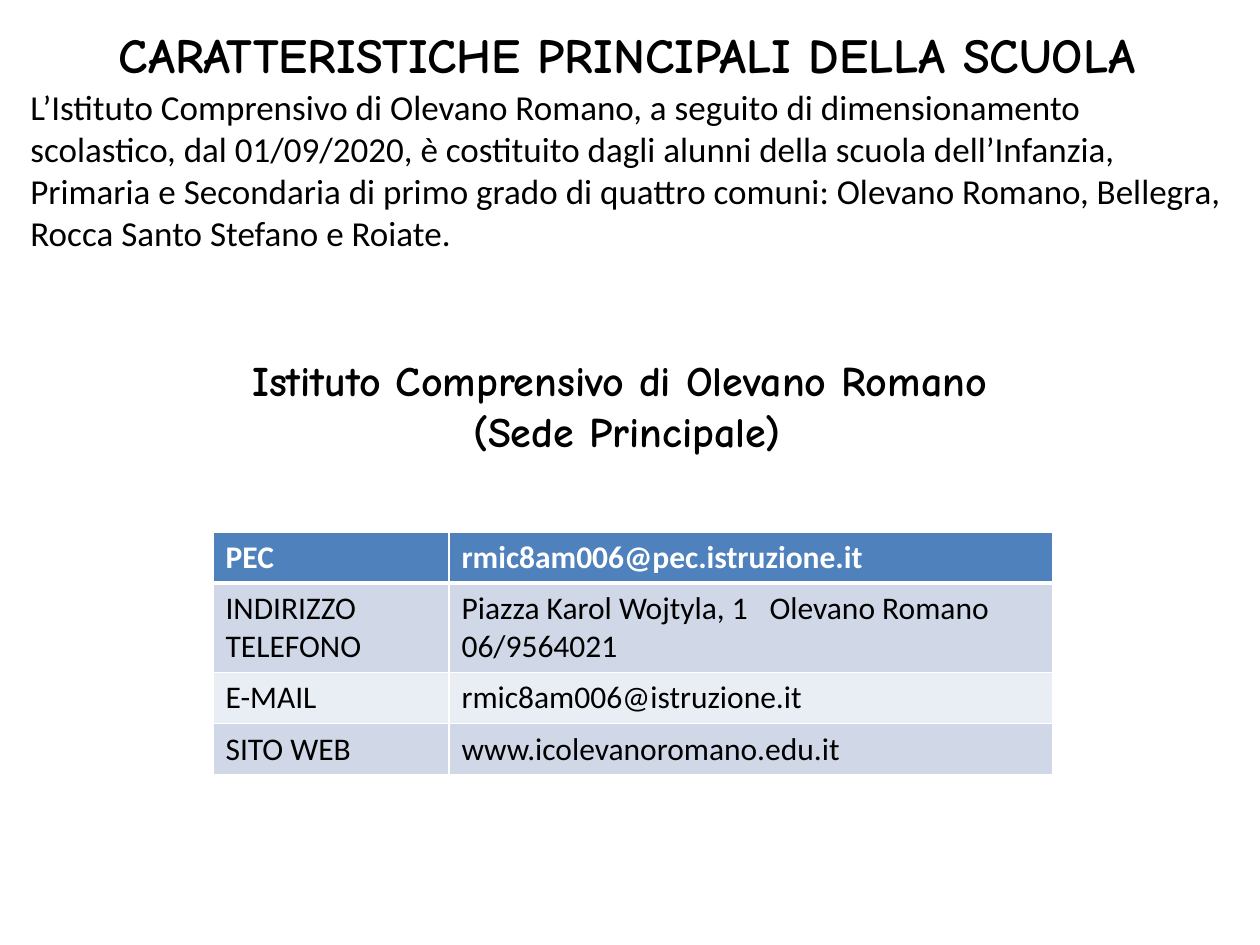
from lxml import etree
from pptx import Presentation
from pptx import util as u
from pptx.dml.color import RGBColor
from pptx.enum import text
from pptx.oxml.ns import qn

PX = 914400 // 126


def px(n):
    return u.Emu(n * PX)


def rgb(value):
    return RGBColor.from_string(value)


class Deck:
    BODY, DISPLAY = "Calibri", "Comic Neue"
    BLACK, WHITE = "000000", "FFFFFF"
    HEADER, BANDS = "4F81BD", ("E9EDF4", "D0D8E8")

    def __init__(self):
        self.prs = Presentation()
        self.prs.slide_width, self.prs.slide_height = u.Inches(10), u.Inches(7.5)
        self.s = self.prs.slides.add_slide(self.prs.slide_layouts[5])

    def format(self, p, name, size, color, bold=False, align=text.PP_ALIGN.LEFT):
        p.alignment = align
        for r in p.runs:
            r.font.name, r.font.size, r.font.bold = name, u.Pt(size), bold
            r.font.color.rgb = rgb(color)

    def frame(self, sp):
        tf = sp.text_frame
        tf.word_wrap = True
        tf.auto_size = text.MSO_AUTO_SIZE.NONE
        tf.vertical_anchor = text.MSO_ANCHOR.TOP
        return tf

    def title(self, x, y, w, h, words):
        sp = self.s.shapes.title
        sp.left, sp.top, sp.width, sp.height = map(px, (x, y, w, h))
        tf = self.frame(sp)
        tf.text = words
        self.format(tf.paragraphs[0], self.DISPLAY, 28, self.BLACK, True, text.PP_ALIGN.CENTER)

    def body(self, x, y, w, h, intro, headings, gap):
        tf = self.frame(self.s.shapes.add_textbox(*map(px, (x, y, w, h))))
        tf.text = "\n".join([intro, *headings])
        first, *rest = tf.paragraphs
        self.format(first, self.BODY, 20, self.BLACK)
        for p in rest:
            self.format(p, self.DISPLAY, 24, self.BLACK, True, text.PP_ALIGN.CENTER)
        rest[0].space_before = u.Pt(gap)

    def border(self, cell, side, width):
        ln = etree.SubElement(cell._tc.get_or_add_tcPr(), qn(f"a:ln{side}"), w=str(u.Pt(width)))
        fill = etree.SubElement(ln, qn("a:solidFill"))
        etree.SubElement(fill, qn("a:srgbClr"), val=self.WHITE)

    def tab_stop(self, p, pos):
        tabs = etree.SubElement(p._p.get_or_add_pPr(), qn("a:tabLst"))
        etree.SubElement(tabs, qn("a:tab"), pos=str(px(pos)), algn="l")

    def cell(self, cell, words, row, tab):
        header = row == 0
        for side in "LRTB":
            heavy = (header and side == "B") or (row == 1 and side == "T")
            self.border(cell, side, 3 if heavy else 1)
        cell.fill.solid()
        cell.fill.fore_color.rgb = rgb(self.HEADER if header else self.BANDS[row % 2])
        cell.text_frame.text = words
        for p in cell.text_frame.paragraphs:
            if "\t" in p.text:
                self.tab_stop(p, tab)
            self.format(p, self.BODY, 18, self.WHITE if header else self.BLACK, header)

    def table(self, x, y, widths, heights, rows, tab):
        size = (x, y, sum(widths), sum(heights))
        tb = self.s.shapes.add_table(len(rows), len(widths), *map(px, size)).table
        for column, w in zip(tb.columns, widths):
            column.width = px(w)
        for i, (row, h) in enumerate(zip(rows, heights)):
            tb.rows[i].height = px(h)
            for j, words in enumerate(row):
                self.cell(tb.cell(i, j), words, i, tab)


def main():
    deck = Deck()
    deck.title(18, 18, 1218, 73, "CARATTERISTICHE PRINCIPALI DELLA SCUOLA")
    deck.body(
        18, 79, 1218, 382,
        "L’Istituto Comprensivo di Olevano Romano, a seguito di dimensionamento "
        "scolastico, dal 01/09/2020, è costituito dagli alunni della scuola dell’Infanzia, "
        "Primaria e Secondaria di primo grado di quattro comuni: Olevano Romano, Bellegra, "
        "Rocca Santo Stefano e Roiate.",
        ["Istituto Comprensivo di Olevano Romano ", "(Sede Principale)"],
        58,
    )
    contacts = [
        ("PEC", "rmic8am006@pec.istruzione.it"),
        ("INDIRIZZO\nTELEFONO", "Piazza Karol Wojtyla, 1\tOlevano Romano\n06/9564021"),
        ("E-MAIL", "rmic8am006@istruzione.it"),
        ("SITO WEB", "www.icolevanoromano.edu.it"),
    ]
    deck.table(213, 532, (236, 604), (51, 88, 51, 51), contacts, 308)
    deck.prs.save("out.pptx")


if __name__ == "__main__":
    main()
